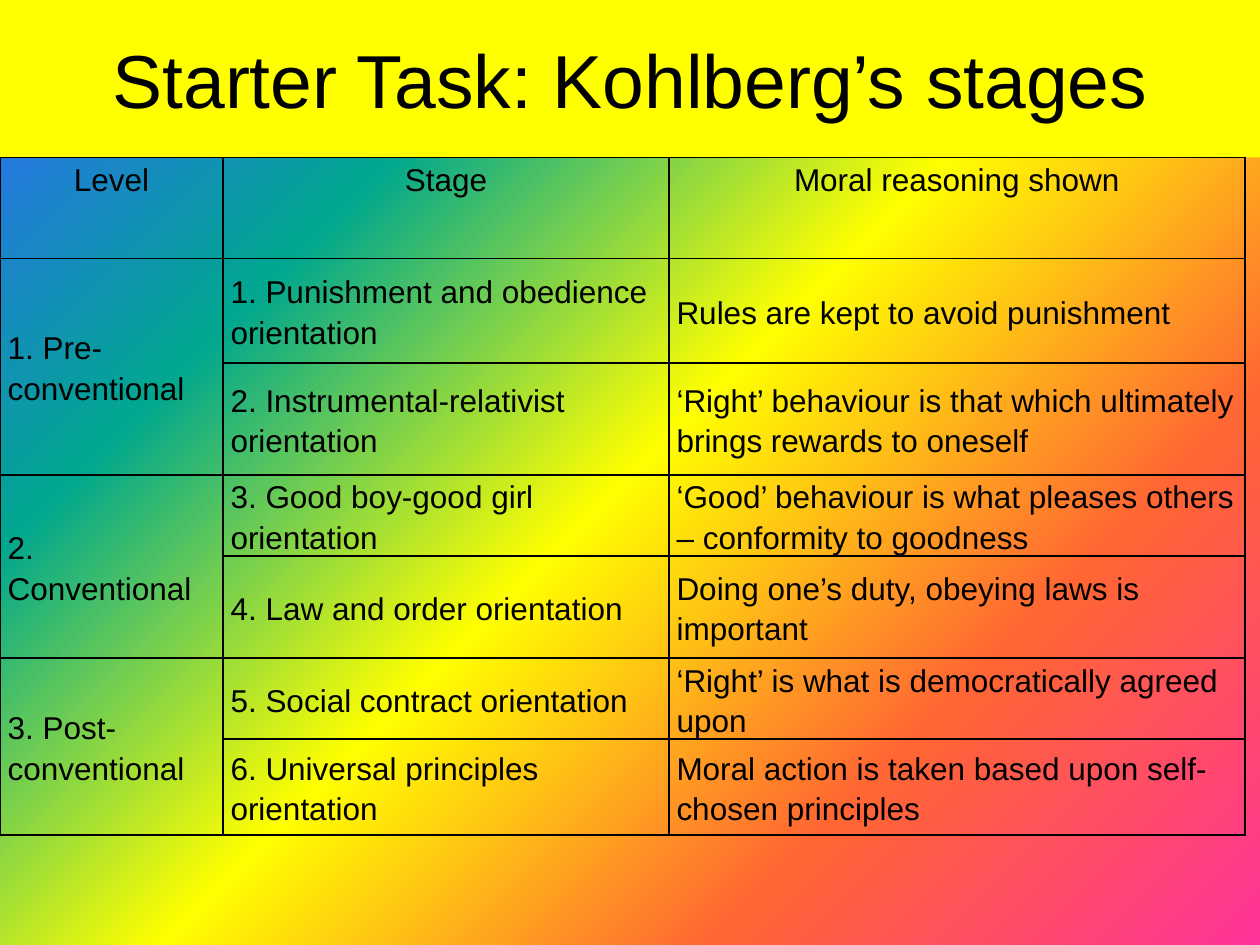
from lxml.etree import SubElement
from pptx import Presentation
from pptx.dml.color import RGBColor
from pptx.enum.text import MSO_ANCHOR as Anchor, PP_ALIGN as Align
from pptx.oxml.ns import qn
from pptx.util import Inches, Pt

COLORS = {"text": "000000", "border": "000000", "title": "FFFF00"}
RAINBOW = ["FF3399", "FF6633", "FFFF00", "01A78F", "3366FF"]
COL_WIDTHS = [1.77, 3.54, 4.57]
ROW_HEIGHTS = [0.8, 0.83, 0.89, 0.61, 0.81, 0.55, 0.76]
HEADERS = ["Level", "Stage", "Moral reasoning shown"]
LEVELS = [
    ("1. Pre-conventional", [
        ("1. Punishment and obedience orientation",
         "Rules are kept to avoid punishment"),
        ("2. Instrumental-relativist orientation",
         "‘Right’ behaviour is that which ultimately brings rewards to oneself"),
    ]),
    ("2. Conventional", [
        ("3. Good boy-good girl orientation",
         "‘Good’ behaviour is what pleases others – conformity to goodness"),
        ("4. Law and order orientation",
         "Doing one’s duty, obeying laws is important"),
    ]),
    ("3. Post-conventional", [
        ("5. Social contract orientation",
         "‘Right’ is what is democratically agreed upon"),
        ("6. Universal principles orientation",
         "Moral action is taken based upon self-chosen principles"),
    ]),
]


def set_attrs(obj, **values):
    """Set each named attribute of an object."""
    for name, value in values.items():
        setattr(obj, name, value)


def write_text(tf, text, size, align, spacing):
    """Write one formatted paragraph into a text frame."""
    p = tf.paragraphs[0]
    set_attrs(p, alignment=align, line_spacing=spacing)
    r = p.add_run()
    r.text = text
    set_attrs(r.font, name="Arial", size=Pt(size), bold=False)
    r.font.color.rgb = RGBColor.from_string(COLORS["text"])


def paint_background(s):
    """Fill the slide background with the diagonal rainbow."""
    fill = s.background.fill
    fill.gradient()
    fill.gradient_angle = 135
    stops = s._element.find(".//" + qn("a:gsLst"))
    for stop in list(stops):
        stops.remove(stop)
    step = 100000 // (len(RAINBOW) - 1)
    for i, color in enumerate(RAINBOW):
        stop = SubElement(stops, qn("a:gs"), pos=str(i * step))
        SubElement(stop, qn("a:srgbClr"), val=color)


def add_title(s, text):
    """Turn the title placeholder into a full-width banner."""
    sp = s.shapes.title
    set_attrs(sp, left=0, top=0, width=Inches(10), height=Inches(1.25))
    sp.fill.solid()
    sp.fill.fore_color.rgb = RGBColor.from_string(COLORS["title"])
    set_attrs(sp.text_frame, word_wrap=True, vertical_anchor=Anchor.MIDDLE)
    write_text(sp.text_frame, text, 42.9, Align.CENTER, 1.0)


def style_cell(cell):
    """Clear a cell's fill and give it margins and thin borders."""
    set_attrs(cell, margin_left=Inches(0.06), margin_right=Inches(0.06),
              margin_top=0, margin_bottom=0)
    tc_pr = cell._tc.get_or_add_tcPr()
    for side in ("lnL", "lnR", "lnT", "lnB"):
        line = SubElement(tc_pr, qn(f"a:{side}"), w=str(Pt(1)))
        fill = SubElement(line, qn("a:solidFill"))
        SubElement(fill, qn("a:srgbClr"), val=COLORS["border"])
    cell.fill.background()


def write_cell(cell, text, align=Align.LEFT, anchor=Anchor.MIDDLE):
    """Write the text of one table cell."""
    cell.vertical_anchor = anchor
    write_text(cell.text_frame, text, 18, align, 1.15)


def add_stage_table(s):
    """Add the table of levels, stages and moral reasoning."""
    table = s.shapes.add_table(
        len(ROW_HEIGHTS), len(COL_WIDTHS), 0, Inches(1.25),
        Inches(sum(COL_WIDTHS)), Inches(sum(ROW_HEIGHTS))).table
    set_attrs(table, first_row=False, horz_banding=False)
    for column, width in zip(table.columns, COL_WIDTHS):
        column.width = Inches(width)
    for row, height in zip(table.rows, ROW_HEIGHTS):
        row.height = Inches(height)
    for cell in table.iter_cells():
        style_cell(cell)
    for col, header in enumerate(HEADERS):
        write_cell(table.cell(0, col), header, Align.CENTER, Anchor.TOP)
    row = 1
    for level, stages in LEVELS:
        table.cell(row, 0).merge(table.cell(row + len(stages) - 1, 0))
        write_cell(table.cell(row, 0), level)
        for stage, reasoning in stages:
            write_cell(table.cell(row, 1), stage)
            write_cell(table.cell(row, 2), reasoning)
            row += 1


def main():
    """Build the slide and save it."""
    prs = Presentation()
    set_attrs(prs, slide_width=Inches(10), slide_height=Inches(7.5))
    s = prs.slides.add_slide(prs.slide_layouts[5])
    paint_background(s)
    add_title(s, "Starter Task: Kohlberg’s stages")
    add_stage_table(s)
    prs.save("out.pptx")


if __name__ == "__main__":
    main()
